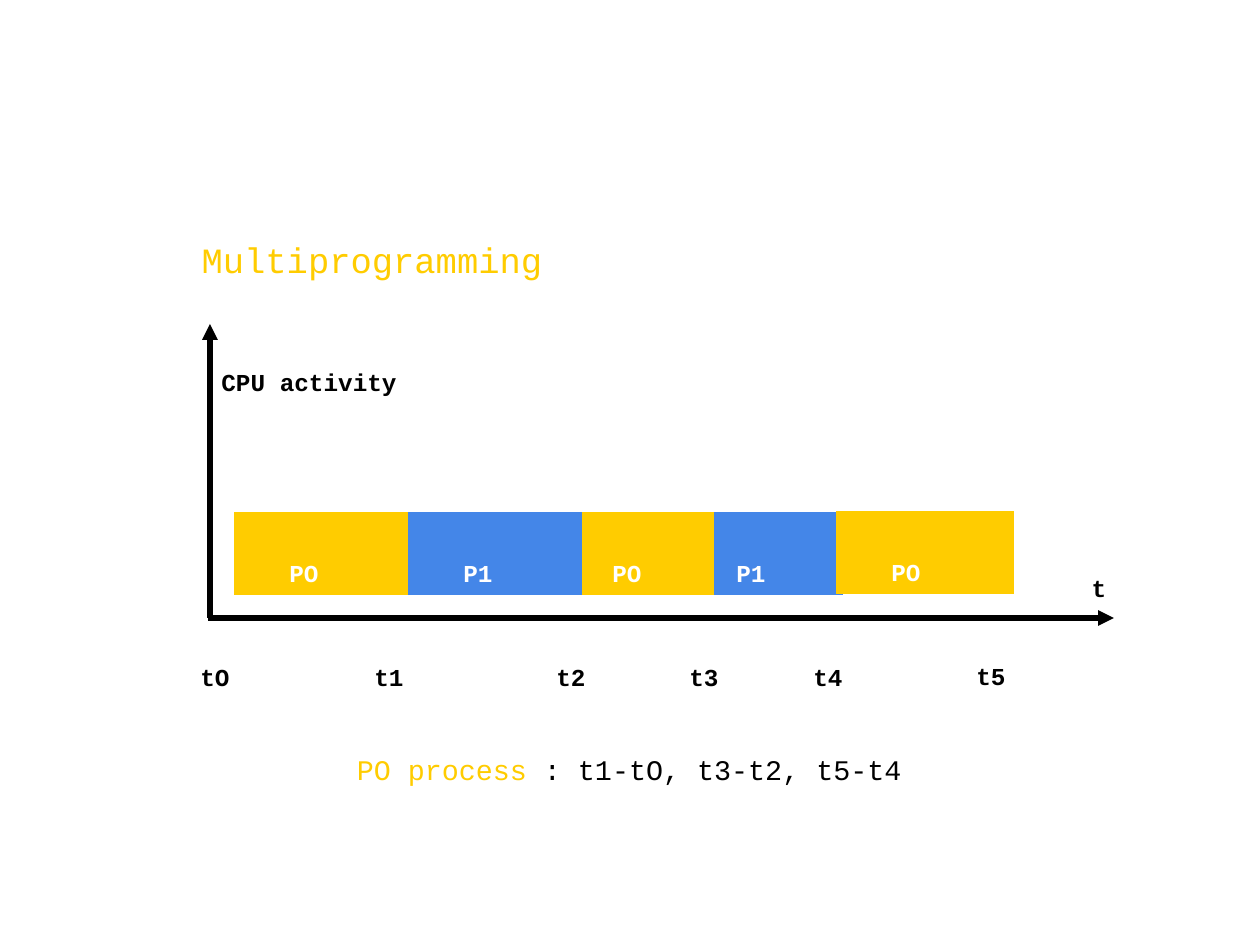
import dataclasses

import lxml.etree
import pptx
import pptx.dml.color
import pptx.enum.shapes
import pptx.enum.text
import pptx.oxml.ns
import pptx.util

ALIGN = pptx.enum.text.PP_ALIGN


@dataclasses.dataclass(frozen=True)
class Theme:
    font: str = "Courier New"
    ink: str = "000000"
    paper: str = "FFFFFF"
    p0: str = "FFCC00"
    p1: str = "4486E8"
    title_size: int = 35
    note_size: int = 28
    label_size: int = 24
    bar_line: float = 2.25
    axis_line: int = 3
    space_before: float = 0.6
    baseline: str = "-25000"


THEME = Theme()

# process, left, width, label left, rise above the common row
BARS = [
    ("PO", 236, 174, 277, 0),
    ("P1", 410, 174, 451, 0),
    ("PO", 584, 132, 600, 0),
    ("P1", 716, 125, 724, 0),
    ("PO", 838, 174, 879, 1),
]
BAR_TOP, BAR_HEIGHT, BAR_LABEL_TOP = 514, 79, 525
BAR_COLORS = {"PO": THEME.p0, "P1": THEME.p1}
LABEL_WIDTH, LABEL_HEIGHT = 100, 58

# text, left, top
TIME_LABELS = [
    ("tO", 165, 629),
    ("t1", 339, 629),
    ("t2", 521, 629),
    ("t3", 654, 629),
    ("t4", 778, 629),
    ("t5", 941, 627),
]


def px(length):
    return pptx.util.Emu(round(length * 914400 / 126))


def rgb(color):
    return pptx.dml.color.RGBColor.from_string(color)


def apply(target, formats):
    for name, value in formats.items():
        setattr(target, name, value)


def add_element(parent, tag, **attributes):
    lxml.etree.SubElement(parent, pptx.oxml.ns.qn(tag), **attributes)


def place(shape, left, top, width, height):
    apply(shape, {"left": px(left), "top": px(top),
                  "width": px(width), "height": px(height)})


def write(shape, spans, size, bold=False, align=ALIGN.LEFT):
    """Fill a shape with one paragraph of (text, color) spans, set as subscript."""
    frame = shape.text_frame
    apply(frame, {
        "word_wrap": True,
        "auto_size": pptx.enum.text.MSO_AUTO_SIZE.NONE,
        "vertical_anchor": pptx.enum.text.MSO_ANCHOR.TOP,
    })
    para = frame.paragraphs[0]
    apply(para, {"alignment": align, "line_spacing": 0.9,
                 "space_before": pptx.util.Pt(size * THEME.space_before)})
    for text, color in spans:
        span = para.add_run()
        span.text = text
        apply(span.font, {"name": THEME.font, "size": pptx.util.Pt(size), "bold": bold})
        span.font.color.rgb = rgb(color)
        span.font._element.set("baseline", THEME.baseline)


def add_text(shapes, bounds, spans, size, **formats):
    box = shapes.add_textbox(*map(px, bounds))
    write(box, spans, size, **formats)


def add_label(shapes, text, left, top, width=LABEL_WIDTH, color=THEME.ink,
              align=ALIGN.CENTER):
    add_text(shapes, (left, top, width, LABEL_HEIGHT), [(text, color)],
             THEME.label_size, bold=True, align=align)


def add_bar(shapes, process, left, width, label_left, rise):
    bar = shapes.add_shape(pptx.enum.shapes.MSO_SHAPE.RECTANGLE,
                           *map(px, (left, BAR_TOP - rise, width, BAR_HEIGHT)))
    bar.shadow.inherit = False
    bar.fill.solid()
    for paint in (bar.fill.fore_color, bar.line.color):
        paint.rgb = rgb(BAR_COLORS[process])
    bar.line.width = pptx.util.Pt(THEME.bar_line)
    add_element(bar.line._get_or_add_ln(), "a:miter", lim="800000")
    add_label(shapes, process, label_left, BAR_LABEL_TOP - rise,
              color=THEME.paper, align=ALIGN.LEFT)


def add_axis(shapes, start, end):
    axis = shapes.add_connector(pptx.enum.shapes.MSO_CONNECTOR.STRAIGHT,
                                *map(px, start + end))
    axis.line.color.rgb = rgb(THEME.ink)
    axis.line.width = pptx.util.Pt(THEME.axis_line)
    add_element(axis.line._get_or_add_ln(), "a:tailEnd", type="triangle")
    add_element(axis._element.spPr, "a:effectLst")


def main():
    deck = pptx.Presentation()
    apply(deck, {"slide_width": px(1260), "slide_height": px(945)})
    page = deck.slides.add_slide(deck.slide_layouts.get_by_name("Title Only"))
    shapes = page.shapes

    place(shapes.title, 189, 192, 804, 78)
    write(shapes.title, [("Multiprogramming", THEME.p0)], THEME.title_size)
    add_text(shapes, (104, 714, 1050, 66),
             [("PO process ", THEME.p0), (": t1-tO, t3-t2, t5-t4", THEME.ink)],
             THEME.note_size, align=ALIGN.CENTER)

    for text, left, top in TIME_LABELS:
        add_label(shapes, text, left, top)

    bars = shapes.add_group_shape().shapes
    for bar in BARS:
        add_bar(bars, *bar)

    add_label(shapes, "t", 1068, 539, width=62)
    add_label(shapes, "CPU activity", 209, 334, width=576, align=ALIGN.LEFT)
    axes = shapes.add_group_shape().shapes
    add_axis(axes, (210, 618), (210, 324))
    add_axis(axes, (208, 618), (1114, 618))

    deck.save("out.pptx")


if __name__ == "__main__":
    main()
